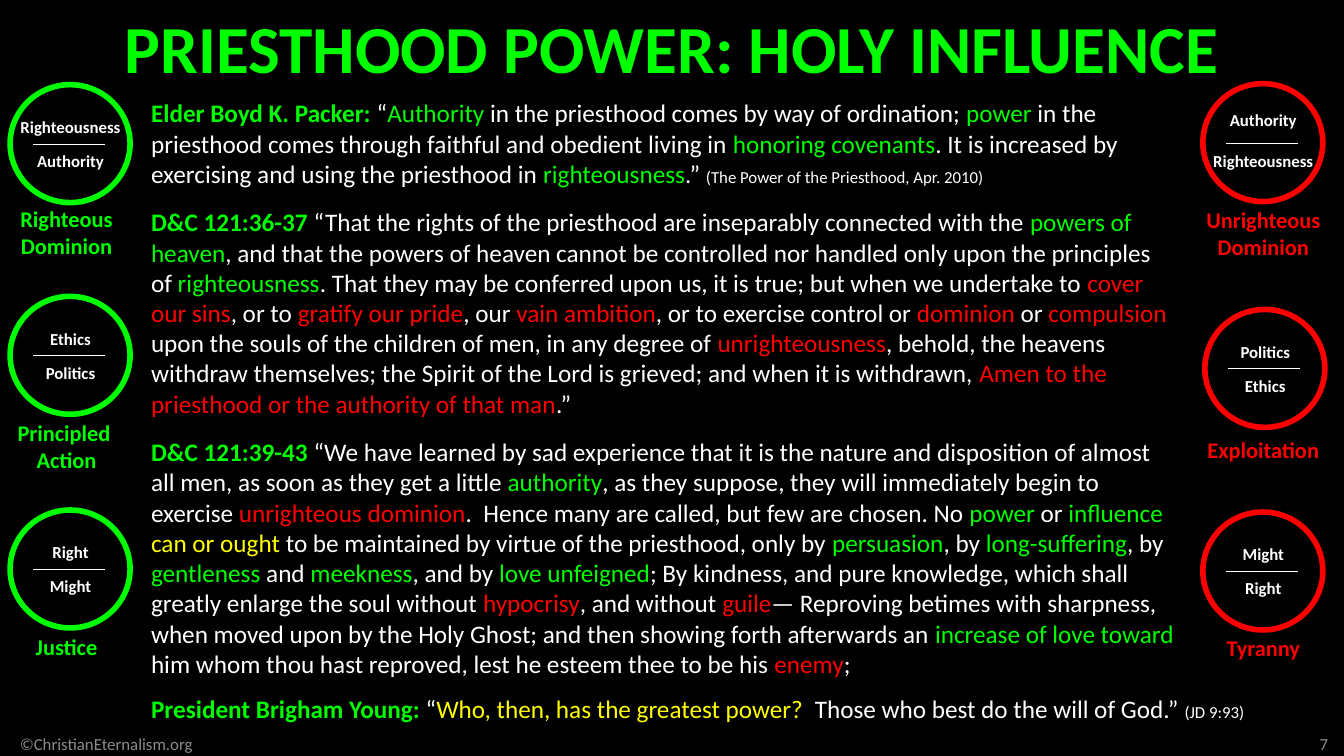
from dataclasses import dataclass

from lxml import etree
from pptx import Presentation
from pptx.dml.color import RGBColor
from pptx.enum import shapes, text
from pptx.oxml import ns
from pptx.util import Inches, Pt


@dataclass(frozen=True)
class Theme:
    font: str = "Calibri"
    black: str = "000000"
    white: str = "FFFFFF"
    green: str = "00FF00"
    red: str = "FF0000"
    yellow: str = "FFFF00"
    gray: str = "8C8C8C"
    title: int = 48
    body: int = 18
    label: int = 16
    small: int = 12


T = Theme()
STYLES = {
    "head": (T.green, T.body, True),
    "w": (T.white, T.body, False),
    "g": (T.green, T.body, False),
    "r": (T.red, T.body, False),
    "y": (T.yellow, T.body, False),
    "cite": (T.white, T.small, False),
}

QUOTES = [
    ((1.4, 0.92, 10.48, 1.01), [
        ("head", "Elder Boyd K. Packer: "), ("w", "“"), ("g", "Authority"),
        ("w", " in the priesthood comes by way of ordination; "), ("g", "power"),
        ("w", " in the priesthood comes through faithful and obedient living in "),
        ("g", "honoring covenants"),
        ("w", ". It is increased by exercising and using the priesthood in "),
        ("g", "righteousness"), ("w", ".” "),
        ("cite", "(The Power of the Priesthood, Apr. 2010)"),
    ]),
    ((1.4, 2, 10.3, 2.22), [
        ("head", "D&C 121:36-37 "),
        ("w", "“That the rights of the priesthood are inseparably connected with the "),
        ("g", "powers of heaven"),
        ("w", ", and that the powers of heaven cannot be controlled nor handled "
              "only upon the principles of "),
        ("g", "righteousness"),
        ("w", ". That they may be conferred upon us, it is true; but when we undertake to "),
        ("r", "cover our sins"), ("w", ", or to "), ("r", "gratify our pride"),
        ("w", ", our "), ("r", "vain ambition"), ("w", ", or to exercise control or "),
        ("r", "dominion"), ("w", " or "), ("r", "compulsion"),
        ("w", " upon the souls of the children of men, in any degree of "),
        ("r", "unrighteousness"),
        ("w", ", behold, the heavens withdraw themselves; the Spirit of the Lord "
              "is grieved; and when it is withdrawn, "),
        ("r", "Amen to the priesthood or the authority of that man"), ("w", ".”"),
    ]),
    ((1.4, 4.28, 10.36, 2.52), [
        ("head", "D&C 121:39-43 "),
        ("w", "“We have learned by sad experience that it is the nature and disposition "
              "of almost all men, as soon as they get a little "),
        ("g", "authority"),
        ("w", ", as they suppose, they will immediately begin to exercise "),
        ("r", "unrighteous dominion"),
        ("w", ".  Hence many are called, but few are chosen. No "),
        ("g", "power"), ("w", " or "), ("g", "influence "), ("y", "can or ought "),
        ("w", "to be maintained by virtue of the priesthood, only by "),
        ("g", "persuasion"), ("w", ", by "), ("g", "long-suffering"), ("w", ", by "),
        ("g", "gentleness"), ("w", " and "), ("g", "meekness"), ("w", ", and by "),
        ("g", "love unfeigned"),
        ("w", "; By kindness, and pure knowledge, which shall greatly enlarge "
              "the soul without "),
        ("r", "hypocrisy"), ("w", ", and without "), ("r", "guile"),
        ("w", "— Reproving betimes with sharpness, when moved upon by the Holy Ghost; "
              "and then showing forth afterwards an "),
        ("g", "increase of love toward "),
        ("w", "him whom thou hast reproved, lest he esteem thee to be his "),
        ("r", "enemy"), ("w", ";"),
    ]),
    ((1.4, 6.83, 11.93, 0.4), [
        ("head", "President Brigham Young: "), ("w", "“"),
        ("y", "Who, then, has the greatest power?  "),
        ("w", "Those who best do the will of God.” "), ("cite", "(JD 9:93)"),
    ]),
]

LEFT = [
    (0.1, 0.84, "Righteousness", "Authority", "Righteous Dominion", 1.15),
    (0.1, 2.94, "Ethics", "Politics", "Principled \nAction", 1.17),
    (0.1, 5.06, "Right", "Might", "Justice", 1.17),
]
RIGHT = [
    (11.93, 0.83, "Authority", "Righteousness", "Unrighteous Dominion", 1.17),
    (11.95, 3.07, "Politics", "Ethics", "Exploitation", 1.21),
    (11.93, 5.08, "Might", "Right", "Tyranny", 1.16),
]


def add_run(para, words, color, size, bold):
    run = para.add_run()
    run.text = words
    font = run.font
    font.name, font.size, font.bold = T.font, Pt(size), bold
    font.color.rgb = RGBColor.from_string(color)


def add_box(slide, box, middle=False):
    frame = slide.shapes.add_textbox(*map(Inches, box)).text_frame
    frame.word_wrap = True
    if middle:
        frame.vertical_anchor = text.MSO_ANCHOR.MIDDLE
    return frame


def add_lines(slide, box, lines, color, size, bold=True, gap=0, middle=False):
    frame = add_box(slide, box, middle)
    for i, words in enumerate(lines):
        para = frame.add_paragraph() if i else frame.paragraphs[0]
        para.alignment = text.PP_ALIGN.CENTER
        if i and gap:
            para.space_before = Pt(gap)
        add_run(para, words, color, size, bold)


def add_quote(slide, box, runs):
    para = add_box(slide, box).paragraphs[0]
    for style, words in runs:
        add_run(para, words, *STYLES[style])


def add_ratio(slide, x, y, top, low, name, drop, color, side, width, wide):
    ring = slide.shapes.add_shape(
        shapes.MSO_SHAPE.OVAL, *map(Inches, (x, y, 1.19, 1.17)))
    ring.shadow.inherit = False
    ring.fill.background()
    ring.line.color.rgb = RGBColor.from_string(color)
    ring.line.width = Pt(4)
    inset, gap = (0.21, 14.6) if wide else (0.27, 9.8)
    add_lines(slide, (x, y + inset, 1.2, 0.64), [top, low], T.white, T.small, gap=gap)
    bar = slide.shapes.add_connector(
        shapes.MSO_CONNECTOR.STRAIGHT,
        *map(Inches, (x + 0.23, y + 0.59, x + 0.94, y + 0.59)))
    bar.line.color.rgb = RGBColor.from_string(T.white)
    bar.line.width = Pt(0.75)
    etree.SubElement(bar._element.spPr, ns.qn("a:effectLst"))
    add_lines(slide, (side, y + drop, width, 0.64), name.split("\n"), color, T.label)


def add_footer(slide):
    for box, words in (((0.02, 7.25, 2.07, 0.25), "©ChristianEternalism.org"),
                       ((12.92, 7.25, 0.42, 0.25), "7")):
        add_lines(slide, box, [words], T.gray, T.small, bold=False, middle=True)


def main():
    deck = Presentation()
    deck.slide_width, deck.slide_height = Inches(13.33), Inches(7.5)
    slide = deck.slides.add_slide(deck.slide_layouts[6])
    fill = slide.background.fill
    fill.solid()
    fill.fore_color.rgb = RGBColor.from_string(T.black)
    add_lines(slide, (0, 0.01, 13.33, 0.91),
              ["PRIESTHOOD POWER: HOLY INFLUENCE"], T.green, T.title)
    for box, runs in QUOTES:
        add_quote(slide, box, runs)
    for ratio in LEFT:
        add_ratio(slide, *ratio, T.green, 0.06, 1.2, False)
    for i, ratio in enumerate(RIGHT):
        add_ratio(slide, *ratio, T.red, 11.8, 1.46, i == 0)
    add_footer(slide)
    deck.save("out.pptx")


if __name__ == "__main__":
    main()
